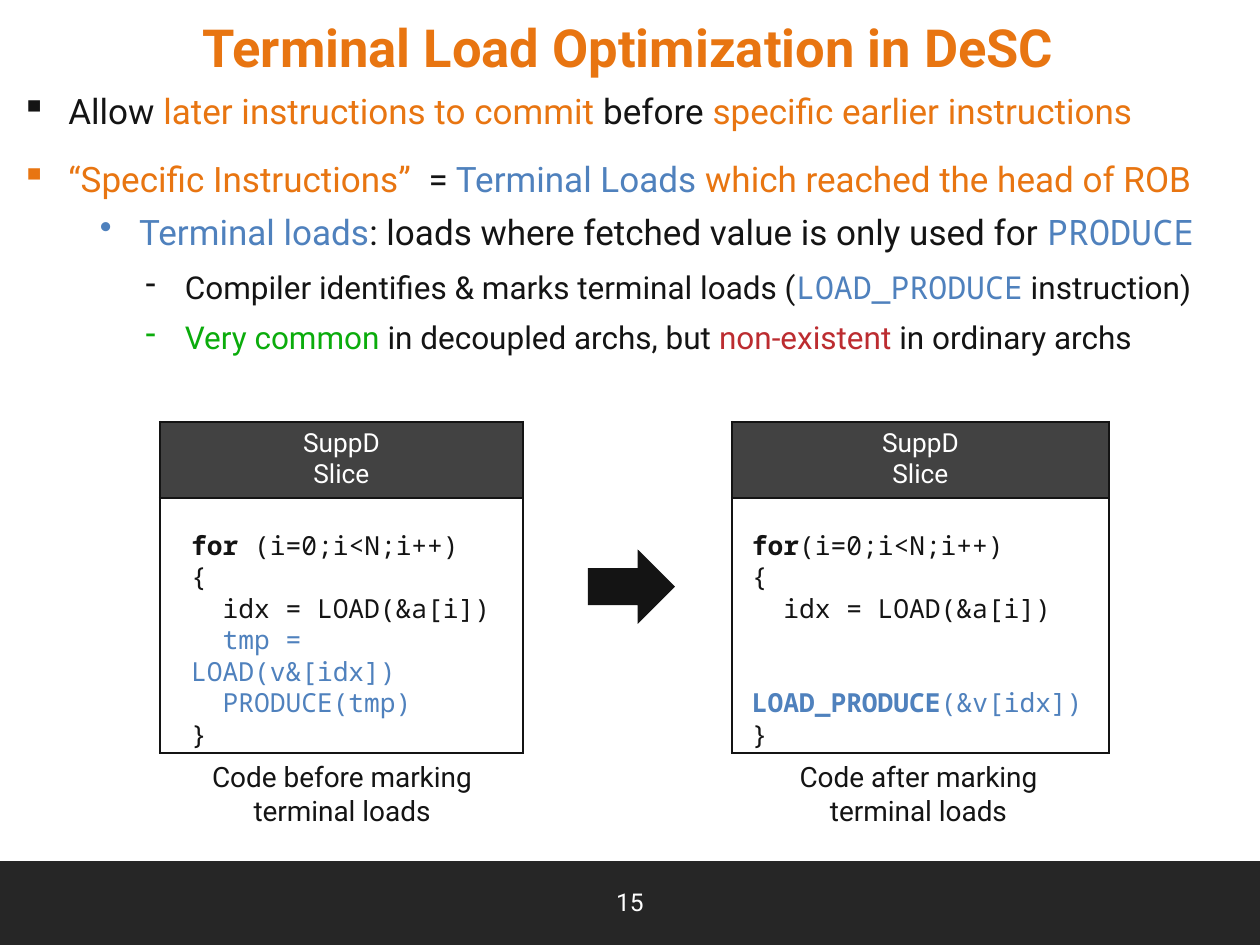
"""Build the slide on terminal load optimization in DeSC."""
from dataclasses import dataclass

from lxml import etree
from pptx import Presentation
from pptx.dml.color import RGBColor
from pptx.enum import shapes, text
from pptx.oxml import ns
from pptx.util import Pt

ORANGE = RGBColor(0xE8, 0x75, 0x11)
INK = RGBColor(0x14, 0x14, 0x14)
BLUE = RGBColor(0x4F, 0x81, 0xBD)
GREEN = RGBColor(0x0B, 0xAC, 0x0C)
RED = RGBColor(0xBC, 0x2C, 0x30)
WHITE = RGBColor(0xFF, 0xFF, 0xFF)
HEADER_GREY = RGBColor(0x42, 0x42, 0x42)
FOOTER_GREY = RGBColor(0x26, 0x26, 0x26)
SANS, MONO = "Roboto", "Noto Sans Mono"
CENTER, LEFT = text.PP_ALIGN.CENTER, text.PP_ALIGN.LEFT
TOP, MIDDLE = text.MSO_ANCHOR.TOP, text.MSO_ANCHOR.MIDDLE
PANEL_TOP, HEADER_HEIGHT, CODE_HEIGHT = 241.2, 43, 146


@dataclass(frozen=True)
class Span:
    words: str
    color: RGBColor = INK
    font: str = SANS
    bold: bool = False


@dataclass(frozen=True)
class Line:
    spans: tuple[Span, ...]
    size: float
    before: float = 0
    after: float = 0
    level: int = 0
    bullet: str = ""
    margin: float = 0
    hanging: float = 0


@dataclass(frozen=True)
class Box:
    left: float
    top: float
    width: float
    height: float

    def lengths(self) -> tuple[Pt, Pt, Pt, Pt]:
        return Pt(self.left), Pt(self.top), Pt(self.width), Pt(self.height)


@dataclass(frozen=True)
class Panel:
    left: float
    width: float
    code_box: Box
    code: tuple[Line, ...]
    caption_box: Box
    caption: str


def code_line(*spans: tuple, before: float = 0) -> Line:
    """Return a line of monospaced code from (words, color, bold) tuples."""
    return Line(tuple(Span(words, color, MONO, bold) for words, color, bold in spans),
                15, before)


def plain(words: str, size: float, color: RGBColor, bold: bool = False) -> tuple[Line]:
    """Return a single line in one style, with \\v as its line break."""
    return (Line((Span(words, color, SANS, bold),), size),)


def write(frame, lines: tuple[Line, ...], align=LEFT, anchor=TOP) -> None:
    """Fill a text frame with formatted lines."""
    frame.word_wrap = True
    frame.vertical_anchor = anchor
    for index, line in enumerate(lines):
        paragraph = frame.add_paragraph() if index else frame.paragraphs[0]
        paragraph.alignment = align
        paragraph.level = line.level
        paragraph.space_before = Pt(line.before)
        paragraph.space_after = Pt(line.after)
        if line.bullet:
            properties = paragraph._p.get_or_add_pPr()
            properties.set("marL", str(Pt(line.margin)))
            properties.set("indent", str(-Pt(line.hanging)))
            etree.SubElement(properties, ns.qn("a:buChar"), char=line.bullet)
        paragraph.text = "".join(span.words for span in line.spans[:1])
        for span in line.spans[1:]:
            paragraph.add_run().text = span.words
        styles = line.spans if len(line.spans) > 1 else line.spans * len(paragraph.runs)
        for run, span in zip(paragraph.runs, styles):
            run.font.size = Pt(line.size)
            run.font.name = span.font
            run.font.bold = span.bold
            run.font.color.rgb = span.color


def add_text(slide, box: Box, lines: tuple[Line, ...], align=LEFT, anchor=TOP) -> None:
    """Add a text box holding the given lines."""
    write(slide.shapes.add_textbox(*box.lengths()).text_frame, lines, align, anchor)


def add_solid(slide, kind, box: Box, color: RGBColor) -> None:
    """Add a flat preset shape without an outline."""
    solid = slide.shapes.add_shape(kind, *box.lengths())
    solid.shadow.inherit = False
    solid.fill.solid()
    solid.fill.fore_color.rgb = color
    solid.line.fill.background()


def style_cell(cell, color: RGBColor) -> None:
    """Give a table cell its fill and four borders."""
    properties = cell._tc.get_or_add_tcPr()
    for side in ("a:lnL", "a:lnR", "a:lnT", "a:lnB"):
        border = etree.SubElement(properties, ns.qn(side), w=str(Pt(1.5)))
        fill = etree.SubElement(border, ns.qn("a:solidFill"))
        etree.SubElement(fill, ns.qn("a:srgbClr"), val=str(INK))
    cell.fill.solid()
    cell.fill.fore_color.rgb = color


def add_panel(slide, panel: Panel) -> None:
    """Add a framed code listing with its header and caption."""
    frame = Box(panel.left, PANEL_TOP, panel.width, HEADER_HEIGHT + CODE_HEIGHT)
    table = slide.shapes.add_table(2, 1, *frame.lengths()).table
    table.first_row = table.horz_banding = False
    rows = ((HEADER_HEIGHT, HEADER_GREY), (CODE_HEIGHT, WHITE))
    for index, (height, color) in enumerate(rows):
        table.rows[index].height = Pt(height)
        style_cell(table.cell(index, 0), color)
    write(table.cell(0, 0).text_frame, plain("SuppD\vSlice", 15, WHITE), CENTER)
    add_text(slide, panel.caption_box, plain(panel.caption, 16, INK), CENTER)
    add_text(slide, panel.code_box, panel.code)


TOPIC = dict(size=20, bullet="▪", margin=27, hanging=27)
DETAIL = dict(size=18, before=7, level=2, bullet="-", margin=93.6, hanging=22.5)
BULLETS = (
    Line((Span("Allow "), Span("later instructions to commit ", ORANGE),
          Span("before "), Span("specific earlier instructions", ORANGE)), **TOPIC),
    Line((Span("“Specific Instructions”  ", ORANGE), Span("="),
          Span(" Terminal Loads ", BLUE),
          Span("which reached the head of ROB", ORANGE)), before=15, **TOPIC),
    Line((Span("Terminal loads", BLUE),
          Span(": loads where fetched value is only used for "),
          Span("PRODUCE", BLUE, MONO)),
         20, before=6, after=2, level=1, bullet="•", margin=67.5, hanging=22.5),
    Line((Span("Compiler identifies & marks terminal loads ("),
          Span("LOAD_PRODUCE", BLUE, MONO), Span(" instruction)")), **DETAIL),
    Line((Span("Very common ", GREEN), Span("in decoupled archs, but "),
          Span("non-existent ", RED), Span("in ordinary archs")), **DETAIL),
)
LOOP_HEAD = ("(i=0;i<N;i++)", INK, False)
OPENING = (code_line(("{", INK, False)),
           code_line(("  idx = LOAD(&a[i])", INK, False)))
CLOSING = code_line(("}", INK, False))
PANELS = (
    Panel(91.4, 207.4, Box(102.2, 298.8, 201.6, 116.6),
          (code_line(("for ", INK, True), LOOP_HEAD), *OPENING,
           code_line(("  ", INK, False), ("tmp = LOAD(v&[idx])", BLUE, False)),
           code_line(("  PRODUCE(tmp)", BLUE, False)), CLOSING),
          Box(105.1, 430.6, 180.7, 46), "Code before marking\vterminal loads"),
    Panel(418.3, 215.3, Box(422.6, 298.8, 211, 98),
          (code_line(("for", INK, True), LOOP_HEAD), *OPENING,
           code_line(("  ", INK, True), ("LOAD_PRODUCE", BLUE, True),
                     ("(&v[idx])", BLUE, False), before=18), CLOSING),
          Box(442.1, 430.6, 165.6, 46), "Code after marking\vterminal loads"),
)


def main() -> None:
    """Draw the slide and save it."""
    deck = Presentation()
    deck.slide_width, deck.slide_height = Pt(720), Pt(540)
    slide = deck.slides.add_slide(deck.slide_layouts[6])
    add_solid(slide, shapes.MSO_SHAPE.RECTANGLE, Box(0, 492, 720, 48), FOOTER_GREY)
    add_text(slide, Box(13, -11.5, 692, 75.6),
             plain("Terminal Load Optimization in DeSC", 30, ORANGE, True), CENTER, MIDDLE)
    add_text(slide, Box(276, 501.1, 168, 28.8), plain("15", 14, WHITE), CENTER, MIDDLE)
    add_text(slide, Box(5, 47.5, 737.3, 202.3), BULLETS)
    for panel in PANELS:
        add_panel(slide, panel)
    add_solid(slide, shapes.MSO_SHAPE.RIGHT_ARROW, Box(336, 314, 49.7, 42.5), INK)
    deck.save("out.pptx")


if __name__ == "__main__":
    main()
